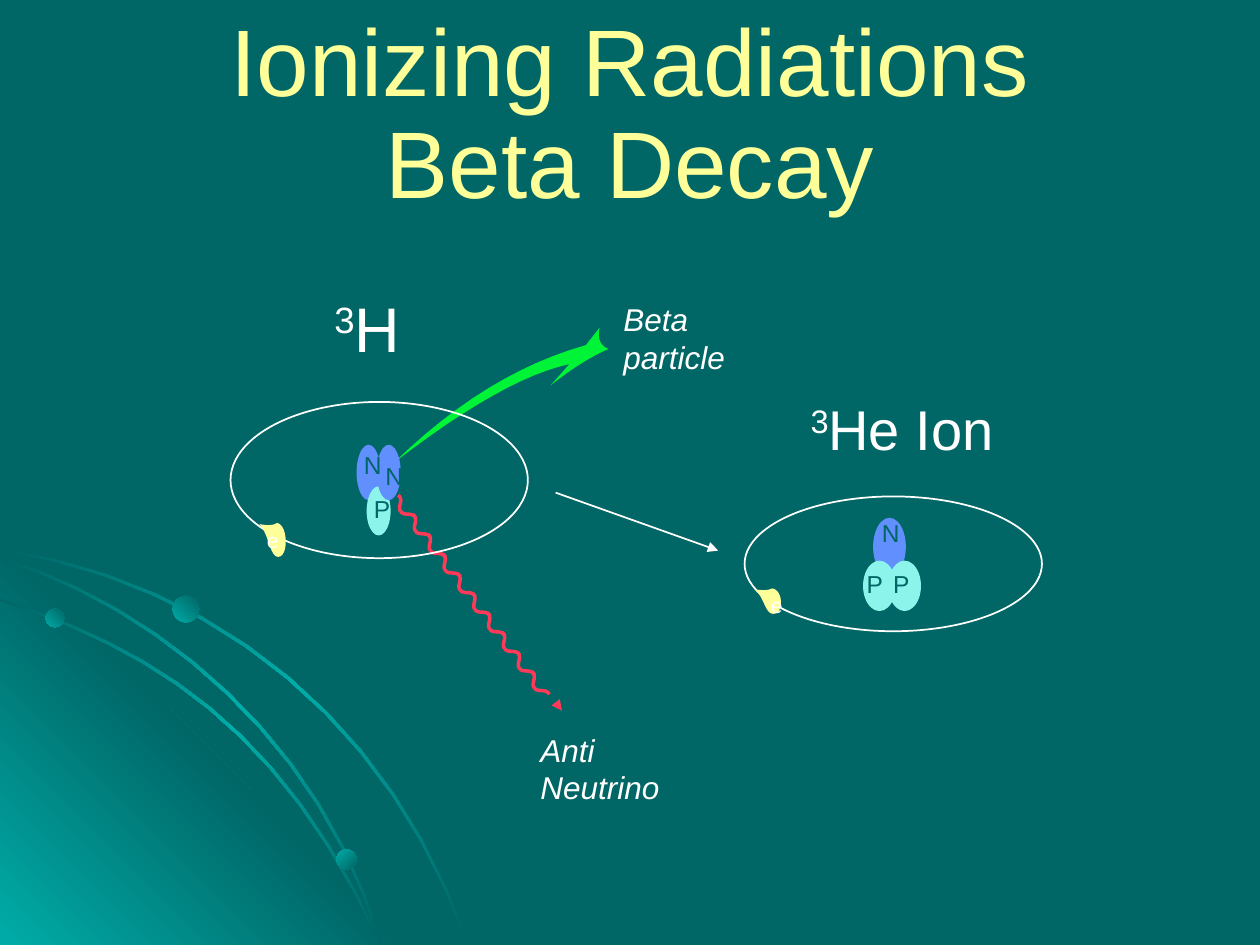
import math
import pptx
import pptx.util
import pptx.dml.color
import pptx.enum.shapes
import pptx.enum.text
import pptx.oxml.ns
from lxml import etree

COLORS = {
    "teal": "006666", "glow": "00ACA8", "yellow": "FFFF99", "white": "FFFFFF",
    "beta": "00F437", "neutrino": "FF3958", "neutron": "618FFD", "proton": "8CF4EA",
}
RGB = {name: pptx.dml.color.RGBColor.from_string(c) for name, c in COLORS.items()}
qn = pptx.oxml.ns.qn
SHAPE = pptx.enum.shapes.MSO_SHAPE
ALIGN = pptx.enum.text.PP_ALIGN

prs = pptx.Presentation()
prs.slide_width, prs.slide_height = pptx.util.Inches(10), pptx.util.Inches(7.5)
U = prs.slide_width // 1000  # grid of 1000 columns by 750 rows
slide = prs.slides.add_slide(prs.slide_layouts[6])
slide.background.fill.solid()
slide.background.fill.fore_color.rgb = RGB["teal"]
shapes = slide.shapes


def style(s, fill=None, line=None, width=1, angle=0):
    """Fill is a colour name, a list of gradient colour names, or None."""
    s.shadow.inherit = False
    if isinstance(fill, list):
        s.fill.gradient()
        s.fill.gradient_angle = angle
        stops = s._element.spPr.find(".//" + qn("a:gsLst"))
        for old in list(stops):
            stops.remove(old)
        for i, name in enumerate(fill):
            gs = etree.SubElement(stops, qn("a:gs"), pos=str(100000 * i // (len(fill) - 1)))
            etree.SubElement(gs, qn("a:srgbClr"), val=COLORS[name])
    elif fill:
        s.fill.solid()
        s.fill.fore_color.rgb = RGB[fill]
    else:
        s.fill.background()
    if line:
        s.line.color.rgb = RGB[line]
        s.line.width = pptx.util.Pt(width)
    else:
        s.line.fill.background()


def outline(segments, left=0, top=0, squeeze=1, close=True):
    """Join Bezier segments: two control points make a line, more make a curve."""
    points = []
    for controls in segments:
        degree = len(controls) - 1
        steps = 1 if degree == 1 else 12
        for step in range(steps + 1):
            t = step / steps
            weights = [math.comb(degree, k) * t**k * (1 - t)**(degree - k)
                       for k in range(degree + 1)]
            x = sum(w * px for w, (px, py) in zip(weights, controls))
            y = sum(w * py for w, (px, py) in zip(weights, controls))
            points.append((round((left + x) * U), round((top + y * squeeze) * U)))
    fb = shapes.build_freeform(*points[0])
    fb.add_line_segments(points[1:], close=close)
    return fb.convert_to_shape()


# Corner decoration: a glowing triangle crossed by three thin arcs
ARCS = {
    "upper": [(0, 435), (175, 462), (312, 575), (372, 749)],
    "lower": [(0, 475), (120, 514), (224, 574), (303, 749)],
    "middle": [(0, 442), (125, 480), (257, 587), (303, 749)],
}
THICKNESS = [(0, 2), (-2, 2), (-2, 2), (-2, 0)]  # from outer to inner edge
s = shapes.add_shape(SHAPE.RIGHT_TRIANGLE, 0, 427 * U, 322 * U, 323 * U)
style(s, ["glow", "teal", "glow"], angle=45)
for outer in ARCS.values():
    inner = [(x + dx, y + dy) for (x, y), (dx, dy) in zip(outer, THICKNESS)]
    style(outline([outer, inner[::-1]]), ["teal", "glow", "teal"], angle=315)

# Beads on the arcs
for x, y, size, angle in [(36, 483, 15, 45), (267, 674, 16, 315), (137, 473, 21, 45)]:
    s = shapes.add_shape(SHAPE.OVAL, x * U, y * U, size * U, size * U)
    style(s, ["glow", "teal"], angle=angle)

# Beta particle: a swooping arrow
TAIL, NOTCH, BARB, TIP = (313, 367), (465, 274), (476, 260), (483, 277)
LOWER_NOTCH, LOWER_BARB = (452, 289), (437, 306)
beta_arrow = [
    [TAIL, (386, 296), NOTCH],
    [NOTCH, BARB],
    [BARB, (473, 273), TIP],
    [TIP, (462, 286), LOWER_BARB],
    [LOWER_BARB, LOWER_NOTCH],
    [LOWER_NOTCH, (400, 300), TAIL],
]
style(outline(beta_arrow), "beta")

# Antineutrino: ten waves, each a downward and a sideways stroke
WAVES, WAVE_DX, WAVE_DY = 10, 106 / 9, 140 / 9
down_stroke = [(0, 0), (5, 4), (-1, 9), (2, 13)]
side_stroke = [(2, 13), (5, 17), (11, 13), (14, 18)]
for i in range(WAVES):
    for stroke in (down_stroke, side_stroke):
        s = outline([stroke], 316 + i * WAVE_DX, 393 + i * WAVE_DY, close=False)
        style(s, line="neutrino", width=2)

# Decay arrow and antineutrino arrowhead
for x1, y1, x2, y2, color in [(441, 391, 570, 437, "white"), (443, 560, 446, 564, "neutrino")]:
    s = shapes.add_connector(pptx.enum.shapes.MSO_CONNECTOR.STRAIGHT,
                             x1 * U, y1 * U, x2 * U, y2 * U)
    s.line.color.rgb = RGB[color]
    s.line.width = pptx.util.Pt(1)
    etree.SubElement(s.line._get_or_add_ln(), qn("a:tailEnd"), type="triangle")
    etree.SubElement(s._element.spPr, qn("a:effectLst"))

# Atoms: orbit, nucleons from back to front, and electron (left, top, squeeze)
ELECTRON = [
    [(0, 1), (8, 10), (8, 27), (15, 27)],
    [(15, 27), (23, 27), (23, 2), (14, 0)],
    [(14, 0), (10, 3), (0, 1)],
]
tritium = {
    "orbit": (183, 319, 236, 124),
    "nucleons": [("neutron", 283, 353, 19, 44), ("proton", 291, 386, 19, 39),
                 ("neutron", 299, 353, 19, 44)],
    "electron": (206, 415, 1),
}
helium_ion = {
    "orbit": (591, 394, 236, 107),
    "nucleons": [("neutron", 693, 411, 26, 46), ("proton", 685, 445, 26, 40),
                 ("proton", 705, 445, 26, 40)],
    "electron": (599, 467, 0.75),
}
for atom in (tritium, helium_ion):
    for kind, *box in atom["nucleons"]:
        style(shapes.add_shape(SHAPE.OVAL, *[v * U for v in box]), kind)
    style(shapes.add_shape(SHAPE.OVAL, *[v * U for v in atom["orbit"]]), line="white")
    left, top, squeeze = atom["electron"]
    style(outline(ELECTRON, left, top, squeeze), "yellow")
    s = shapes.add_shape(SHAPE.OVAL, (left + 15) * U, round((top + 19 * squeeze) * U),
                         2 * U, round(5 * squeeze * U))
    style(s, "yellow")

# Text styles: size, colour, alignment, italic
STYLES = {
    "title": (54, "yellow", ALIGN.CENTER, False),
    "hydrogen": (36, "white", ALIGN.CENTER, False),
    "helium": (32, "white", ALIGN.CENTER, False),
    "product": (18, "white", ALIGN.LEFT, True),
    "nucleon": (14, "teal", ALIGN.LEFT, False),
    "electron": (12, "white", ALIGN.LEFT, False),
}
# Text boxes: style, superscript, text, left, top, width, height
for role, mass, text, *box in [
    ("title", "", "Ionizing Radiations\vBeta Decay", 50, 30, 900, 125),
    ("hydrogen", "3", "H", 235, 225, 113, 70),
    ("helium", "3", "He Ion", 626, 308, 180, 63),
    ("product", "", "Beta particle", 485, 233, 113, 70),
    ("product", "", "Anti Neutrino", 419, 575, 135, 70),
    ("nucleon", "", "N", 279, 352, 24, 33),
    ("nucleon", "", "P", 287, 387, 20, 33),
    ("nucleon", "", "N", 296, 361, 24, 33),
    ("electron", "", "e", 202, 414, 32, 30),
    ("electron", "", "e", 602, 465, 48, 30),
    ("nucleon", "", "N", 690, 406, 38, 33),
    ("nucleon", "", "P", 678, 447, 33, 33),
    ("nucleon", "", "P", 699, 447, 33, 33),
]:
    size, color, align, italic = STYLES[role]
    tf = shapes.add_textbox(*[v * U for v in box]).text_frame
    tf.word_wrap = True
    p = tf.paragraphs[0]
    p.alignment = align
    p.text = mass or text
    if mass:
        p.runs[0].font._element.set("baseline", "30000")
        p.add_run().text = text
    if role == "title":
        tf.vertical_anchor = pptx.enum.text.MSO_ANCHOR.MIDDLE
        p.line_spacing = 0.9
    for r in p.runs:
        for key, value in {"name": "Arial", "size": pptx.util.Pt(size), "italic": italic}.items():
            setattr(r.font, key, value)
        r.font.color.rgb = RGB[color]

prs.save("out.pptx")
